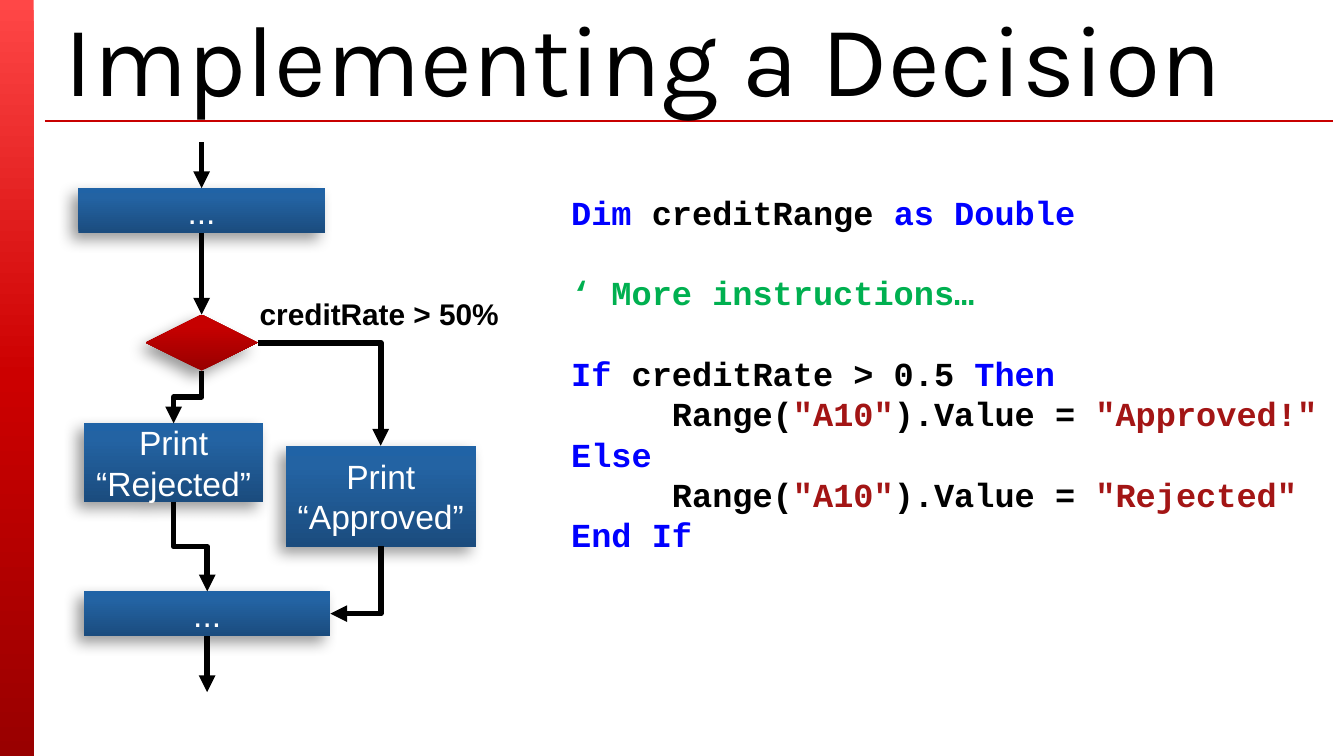
from lxml import etree
from pptx import Presentation
from pptx import util as u
from pptx.dml.color import RGBColor
from pptx.enum import shapes, text
from pptx.oxml.ns import qn

PX = 7620  # 120 px to the inch
BLACK, BLUE, RED, GREEN = "000000", "0000FF", "A31515", "00B050"
BLUE_STOPS = [(0, "1B4C7E"), (80, "2363A3"), (100, "2063A6")]
RED_STOPS = [(0, "980000"), (80, "C60000"), (100, "C70000")]
BAR_STOPS = [(0, "FF4747"), (50, "CC0000"), (100, "990000")]
LINE_PITCH = u.Pt(21.6)


def add_run(para, wording, font, size, color, bold=False):
    span = para.add_run()
    span.text = wording
    span.font.name, span.font.size, span.font.bold = font, u.Pt(size), bold
    span.font.color.rgb = RGBColor.from_string(color)


def add_block(kind, bounds, stops, angle):
    """Add a preset shape with a gradient fill and neither outline nor shadow."""
    block = page.shapes.add_shape(kind, *[v * PX for v in bounds])
    block.shadow.inherit = False
    block.line.fill.background()
    block.fill.gradient()
    block.fill.gradient_angle = angle
    stop_list = block._element.spPr.find(".//" + qn("a:gsLst"))
    for old in list(stop_list):
        stop_list.remove(old)
    for position, color in stops:
        stop = etree.SubElement(stop_list, qn("a:gs"), pos=str(position * 1000))
        etree.SubElement(stop, qn("a:srgbClr"), val=color)
    return block


deck = Presentation()
deck.slide_width, deck.slide_height = 1200 * PX, 675 * PX
page = deck.slides.add_slide(deck.slide_layouts[5])

# Side bar and title rule
add_block(shapes.MSO_SHAPE.RECTANGLE, (0, 0, 30, 675), BAR_STOPS, 270)
rule = page.shapes.add_connector(
    shapes.MSO_CONNECTOR.STRAIGHT, 40 * PX, 108 * PX, 1190 * PX, 108 * PX)
rule.line.width = u.Pt(0.75)
rule.line.color.rgb = RGBColor.from_string("C80000")
etree.SubElement(rule._element.spPr, qn("a:effectLst"))

# Title, in front of the rule
title = page.shapes.title
title.left, title.top, title.width, title.height = [v * PX for v in (46, 18, 1150, 64)]
title.text_frame.auto_size = text.MSO_AUTO_SIZE.NONE
title.text_frame.vertical_anchor = text.MSO_ANCHOR.MIDDLE
para = title.text_frame.paragraphs[0]
para.alignment = text.PP_ALIGN.LEFT
add_run(para, "Implementing a Decision", "Karla", 54, BLACK)
page.shapes._spTree.append(title._element)

# Flowchart steps
process = shapes.MSO_SHAPE.FLOWCHART_PROCESS
decision = shapes.MSO_SHAPE.FLOWCHART_DECISION
steps = [
    (process, (70, 168, 220, 40), BLUE_STOPS, "..."),
    (decision, (130, 281, 100, 50), RED_STOPS, ""),
    (process, (255, 398, 170, 90), BLUE_STOPS, "Print “Approved”"),
    (process, (75, 378, 160, 70), BLUE_STOPS, "Print “Rejected”"),
    (process, (75, 528, 220, 40), BLUE_STOPS, "..."),
]
for kind, bounds, stops, wording in steps:
    step = add_block(kind, bounds, stops, 90)
    effects = step._element.spPr.find(qn("a:effectLst"))
    shadow = etree.SubElement(
        effects, qn("a:outerShdw"), blurRad=str(u.Pt(8)), dist=str(u.Pt(5)),
        dir=str(135 * 60000), algn="ctr", rotWithShape="0")
    shade = etree.SubElement(shadow, qn("a:srgbClr"), val=BLACK)
    etree.SubElement(shade, qn("a:alpha"), val="40000")
    if wording:
        frame = step.text_frame
        frame.word_wrap = True
        frame.vertical_anchor = text.MSO_ANCHOR.MIDDLE
        frame.margin_left = frame.margin_right = 6 * PX
        frame.margin_top = frame.margin_bottom = 6 * PX
        para = frame.paragraphs[0]
        para.alignment = text.PP_ALIGN.CENTER
        para.line_spacing = LINE_PITCH
        add_run(para, wording, "Arial", 18, "FFFFFF")

# Arrows: start, end, preset, whether the first leg runs down
arrows = [
    ((180, 127), (180, 168), "line", False),
    ((180, 208), (180, 281), "line", False),
    ((230, 306), (340, 398), "bentConnector2", False),
    ((180, 331), (155, 378), "bentConnector3", True),
    ((155, 448), (185, 528), "bentConnector3", True),
    ((340, 488), (295, 548), "bentConnector2", True),
    ((185, 568), (185, 618), "line", False),
]
for (x1, y1), (x2, y2), preset, down_first in arrows:
    ends = [x1, y1, x2, y2]
    if down_first:  # lay the connector on its side, then turn it about its centre
        side = 1 if x2 < x1 else -1
        mid_x, mid_y = (x1 + x2) / 2, (y1 + y2) / 2
        half_run, half_drop = abs(x2 - x1) / 2, (y2 - y1) / 2
        ends = [mid_x - side * half_drop, mid_y - half_run,
                mid_x + side * half_drop, mid_y + half_run]
    arrow = page.shapes.add_connector(
        shapes.MSO_CONNECTOR.ELBOW, *[int(v * PX) for v in ends])
    props = arrow._element.spPr
    props.find(qn("a:prstGeom")).set("prst", preset)
    if down_first:
        angle = 90 if side == 1 else 270
        props.find(qn("a:xfrm")).set("rot", str(angle * 60000))
    arrow.line.width = u.Pt(3)
    arrow.line.color.rgb = RGBColor.from_string(BLACK)
    etree.SubElement(props.find(qn("a:ln")), qn("a:tailEnd"), type="triangle")
    etree.SubElement(props, qn("a:effectLst"))

# Condition label
label = page.shapes.add_textbox(*[v * PX for v in (220, 258, 260, 44)])
label.text_frame.word_wrap = True
label.text_frame.auto_size = text.MSO_AUTO_SIZE.SHAPE_TO_FIT_TEXT
add_run(label.text_frame.paragraphs[0], "creditRate > 50%", "Arial", 16, BLACK, True)

# Code listing: whether a gap comes before, then the coloured pieces
listing = [
    (False, [("Dim ", BLUE), ("creditRange", BLACK), (" as Double", BLUE)]),
    (True, [("‘ More instructions…", GREEN)]),
    (True, [("If", BLUE), (" creditRate > 0.5 ", BLACK), ("Then", BLUE)]),
]
for keyword, verdict in (("Else", '"Approved!"'), ("End If", '"Rejected"')):
    listing.append((False, [("     Range(", BLACK), ('"A10"', RED),
                            (").Value = ", BLACK), (verdict, RED)]))
    listing.append((False, [(keyword, BLUE)]))

code = page.shapes.add_textbox(*[v * PX for v in (510, 168, 670, 364)])
frame = code.text_frame
frame.word_wrap = True
frame.margin_left = frame.margin_right = frame.margin_bottom = 0
frame.margin_top = 3 * PX
for index, (gap, pieces) in enumerate(listing):
    para = frame.add_paragraph() if index else frame.paragraphs[0]
    para.line_spacing = LINE_PITCH
    if gap:
        para.space_before = LINE_PITCH
    for wording, color in pieces:
        add_run(para, wording, "Courier New", 18, color, True)

deck.save("out.pptx")
